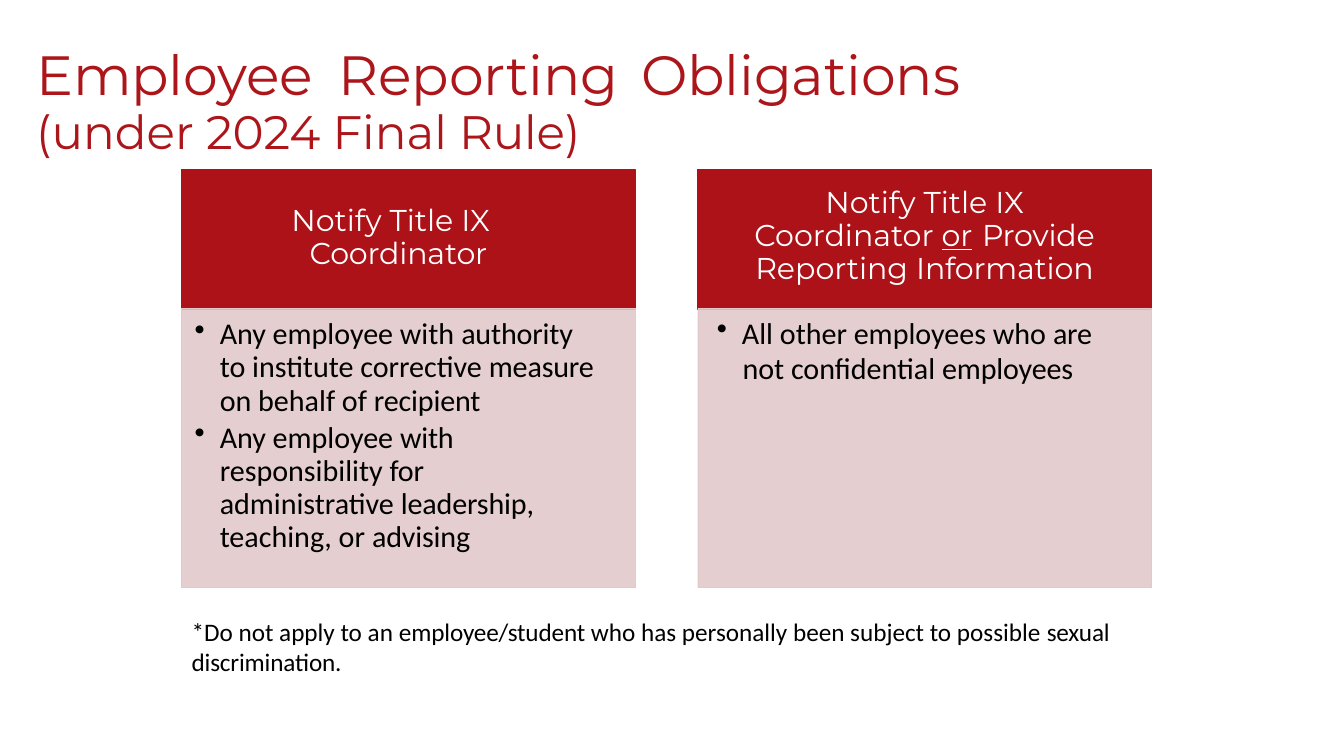
from lxml import etree
from pptx import Presentation
from pptx.dml.color import RGBColor
from pptx.enum.shapes import MSO_SHAPE
from pptx.enum.text import MSO_ANCHOR, PP_ALIGN
from pptx.oxml.ns import qn
from pptx.util import Emu, Pt

RECT = MSO_SHAPE.RECTANGLE
TOP = MSO_ANCHOR.TOP
LEFT, CENTER = PP_ALIGN.LEFT, PP_ALIGN.CENTER
PX = 9144  # 100 px to the inch

COLORS = {"title": "AC161B", "header": "AC1218", "body": "E1C9CA",
          "white": "FFFFFF", "black": "000000"}
STYLES = {
    "title": {"name": "Montserrat", "size": Pt(39.5), "color": "title"},
    "subtitle": {"name": "Montserrat", "size": Pt(33.5), "color": "title"},
    "header": {"name": "Montserrat", "size": Pt(21.5), "color": "white"},
    "body": {"name": "Calibri", "size": Pt(21.5), "color": "black"},
    "note": {"name": "Calibri", "size": Pt(18), "color": "black"},
}


def px(n):
    return Emu(n * PX)


def rgb(name):
    return RGBColor.from_string(COLORS[name])


class Deck:
    def __init__(self, width, height):
        self.prs = Presentation()
        self.prs.slide_width, self.prs.slide_height = px(width), px(height)
        self.s = self.prs.slides.add_slide(self.prs.slide_layouts[6])

    def text(self, box, at, style, inset, paragraphs):
        """Each paragraph is (format dict, [(text, letter spacing, underline)])."""
        tf = box.text_frame
        frame = {"word_wrap": True, "vertical_anchor": TOP, "margin_left": 0,
                 "margin_right": 0, "margin_top": px(inset), "margin_bottom": 0}
        for key, value in frame.items():
            setattr(tf, key, value)
        for i, (fmt, runs) in enumerate(paragraphs):
            p = tf.add_paragraph() if i else tf.paragraphs[0]
            self.paragraph(p, **fmt)
            for words, spacing, *underline in runs:
                self.run(p, style, words, spacing, bool(underline))

    def paragraph(self, p, left=0, right=0, indent=0, bullet=False, tabs=(), **attrs):
        pPr = p._p.get_or_add_pPr()
        for key, value in {"marL": left, "marR": right, "indent": indent}.items():
            pPr.set(key, str(px(value)))
        if bullet:
            etree.SubElement(pPr, qn("a:buChar"), char="•")
        if tabs:
            tab_list = etree.SubElement(pPr, qn("a:tabLst"))
            for tab in tabs:
                etree.SubElement(tab_list, qn("a:tab"), pos=str(px(tab)), algn="l")
        for key, value in {"alignment": LEFT, **attrs}.items():
            setattr(p, key, value)

    def run(self, p, style, words, spacing, underline):
        r = p.add_run()
        r.text = words
        for key, value in STYLES[style].items():
            if key == "color":
                r.font.color.rgb = rgb(value)
            else:
                setattr(r.font, key, value)
        if underline:
            r.font.underline = True
        if spacing:
            r._r.get_or_add_rPr().set("spc", str(spacing))

    def textbox(self, at, style, inset, paragraphs):
        box = self.s.shapes.add_textbox(*map(px, at))
        self.text(box, at, style, inset, paragraphs)

    def panel(self, at, style, inset, paragraphs, line_width, alpha=None):
        sp = self.s.shapes.add_shape(RECT, *map(px, at))
        sp.shadow.inherit = False
        sp.fill.solid()
        sp.fill.fore_color.rgb = rgb(style)
        if alpha:
            color = sp._element.spPr.find(qn("a:solidFill"))[0]
            etree.SubElement(color, qn("a:alpha"), val=str(alpha * 1000))
        sp.line.color.rgb = rgb(style)
        sp.line.width = Pt(line_width)
        self.text(sp, at, style, inset, paragraphs)


# Columns: header inset and paragraphs, body inset and paragraphs
bullet_left = {"left": 38, "right": 34, "indent": -25, "bullet": True, "tabs": [38]}
COLUMNS = [
    (34, [({"left": 127, "indent": -18, "line_spacing": Pt(24)},
           [("Notify Title ", 0), ("IX ", -20), ("Coordinator", -10)])],
     9, [({**bullet_left, "line_spacing": 0.93},
          [("Any employee with ", 0), ("authority ", -10),
           ("to institute corrective ", 0), ("measure ", -10),
           ("on behalf of ", 0), ("recipient", -10)]),
         ({**bullet_left, "line_spacing": 0.92, "space_before": Pt(2.5)},
          [("Any employee ", 0), ("with ", -20), ("responsibility ", 0),
           ("for ", -20), ("administrative ", 0), ("leadership, ", -10),
           ("teaching, or ", 0), ("advising", -10)])]),
    (17, [({"left": 37, "right": 37, "alignment": CENTER, "line_spacing": 0.92},
           [("Notify Title ", 0), ("IX ", -20), ("Coordinator ", 0),
            ("or", 0, "underline"), (" ", 110), ("Provide ", -10),
            ("Reporting ", 0), ("Information", -10)])],
     7, [({"left": 25, "right": 40, "indent": -25, "bullet": True, "tabs": [25],
           "alignment": CENTER, "line_spacing": Pt(24.9)},
          [("All other employees who ", 0), ("are", -20)]),
         ({"right": 33, "alignment": CENTER, "line_spacing": Pt(24.9)},
          [("not confidential ", 0), ("employees", -10)])]),
]


def main():
    deck = Deck(1333, 750)

    # Title and subtitle
    deck.textbox((35, 38, 977, 69), "title", 2,
                 [({"left": 1, "tabs": [316, 630]},
                   [("Employee\tReporting\tObligations", -10)])])
    deck.textbox((35, 100, 600, 59), "subtitle", 2,
                 [({"left": 1}, [("(under 2024 Final ", 0), ("Rule)", -10)])])

    # Two columns, each a header over a body
    for i, (head_inset, head, body_inset, body) in enumerate(COLUMNS):
        x = 180 + i * 512
        deck.panel((x, 168, 450, 139), "header", head_inset, head, 1)
        deck.panel((x, 306, 450, 277), "body", body_inset, body, 0.25, alpha=89)

    # Footnote
    deck.textbox((189, 610, 921, 63), "note", 1,
                 [({"left": 1, "line_spacing": 1.01},
                   [("*Do not apply to an ", 0), ("employee/student ", -10),
                    ("who has personally been subject to possible ", 0),
                    ("sexual discrimination.", -10)])])

    deck.prs.save("out.pptx")


if __name__ == "__main__":
    main()
